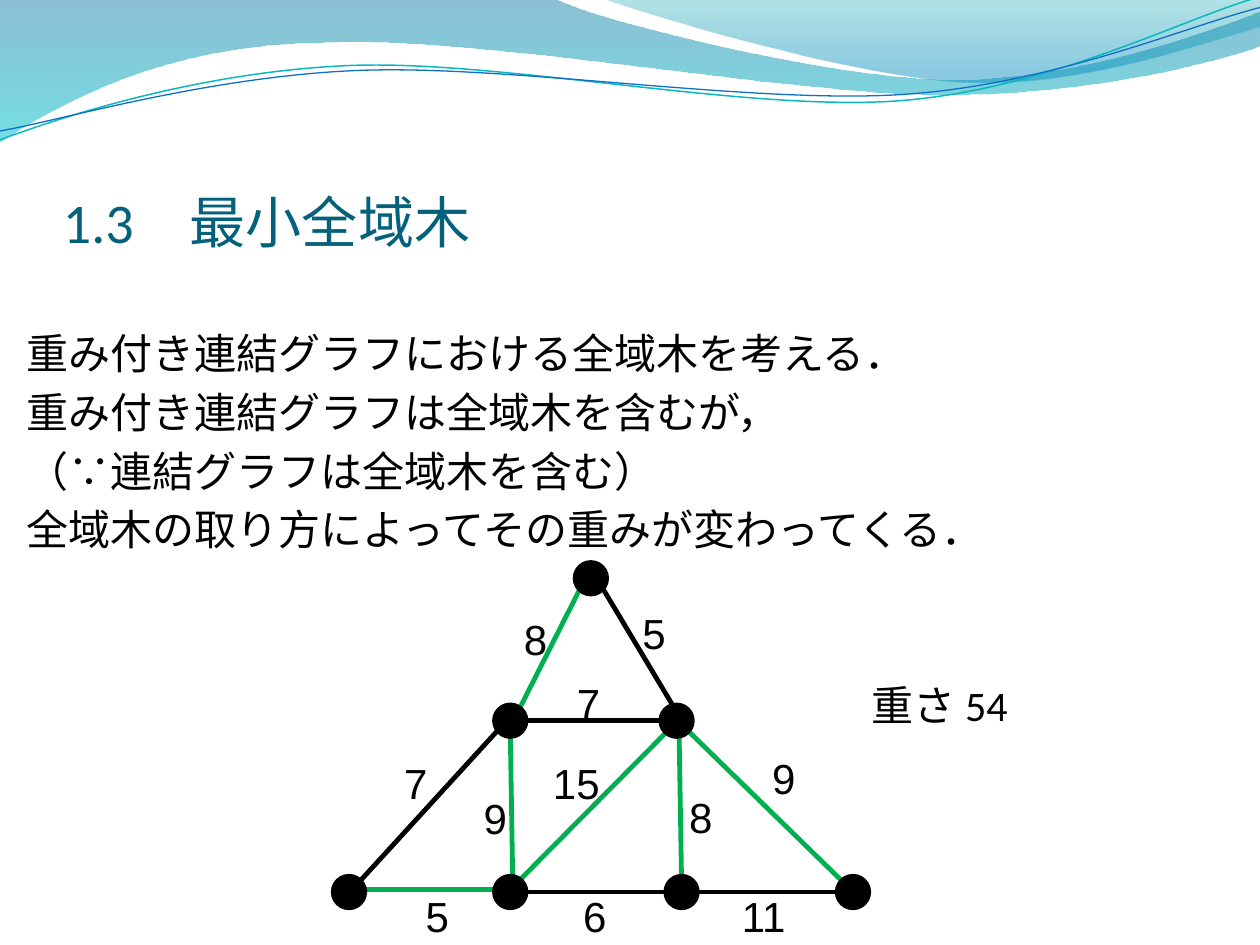
import math

from lxml import etree
from pptx import Presentation
from pptx import util as u
from pptx.dml.color import RGBColor
from pptx.enum import shapes, text
from pptx.oxml import ns

presentation = Presentation()
presentation.slide_width = u.Inches(10)
presentation.slide_height = u.Inches(7.5)
slide = presentation.slides.add_slide(presentation.slide_layouts[6])
column = presentation.slide_width / 10
row = presentation.slide_height / 7.5


def colour(value):
    return RGBColor.from_string(value)


def add_text(lines, left, top, width, height, size, font, value, wrap=True):
    shape = slide.shapes.add_textbox(
        int(left * column), int(top * row), int(width * column), int(height * row))
    frame = shape.text_frame
    frame.word_wrap = wrap
    for index, line in enumerate(lines):
        paragraph = frame.add_paragraph() if index else frame.paragraphs[0]
        if index:
            paragraph.space_before = u.Pt(size * 0.2)
        run = paragraph.add_run()
        run.text = line
        run.font.size = u.Pt(size)
        run.font.name = font
        run.font.color.rgb = colour(value)
    return frame


tilt = 357.3
waves = [
    ([[(0, -0.01)], [(4.4, -0.01)],
      [(4.76, 0.17), (6.64, 0.63), (7.58, 0.63)],
      [(8.53, 0.63), (9.58, 0.26), (10, 0.09)], [(10.01, 0.36)],
      [(9.83, 0.44), (8.7, 0.76), (7.46, 0.75)],
      [(6.22, 0.75), (3.82, 0.28), (2.57, 0.34)],
      [(1.29, 0.35), (0.46, 0.83), (-0.01, 1.13)], [(0, -0.01)]],
     [(0, "0074A1", 45), (1, "00C6CF", 55)], None, None),
    ([[(4.79, -0.01)],
      [(5.09, 0.11), (6.82, 0.62), (7.69, 0.65)],
      [(8.56, 0.69), (9.61, 0.32), (10, 0.21)], [(10, 0)], [(4.79, -0.01)]],
     [(0, "00A1A9", 30), (0.8, "008BBF", 45)], None, None),
    ([[(0, 1.11)],
      [(0.48, 0.93), (1.58, 0.57), (2.77, 0.52)],
      [(3.95, 0.47), (5.93, 0.89), (7.13, 0.8)],
      [(8.33, 0.71), (9.38, 0.15), (9.98, -0.02)]],
     None, ("0AB8BF", 0.85), (4.99, 0.58)),
    ([[(0, 1.04)],
      [(0.47, 0.96), (1.64, 0.61), (2.83, 0.56)],
      [(4.03, 0.51), (5.97, 0.83), (7.17, 0.75)],
      [(8.36, 0.67), (9.41, 0.21), (10, 0.06)]],
     None, ("0F6FC6", 0.75), (5, 0.59)),
]
for segments, stops, stroke, pivot in waves:
    points = [point for segment in segments for point in segment]
    if pivot:
        sine, cosine = (f(math.radians(-tilt)) for f in (math.sin, math.cos))
        offsets = [(x - pivot[0], y - pivot[1]) for x, y in points]
        points = [(pivot[0] + x * cosine - y * sine, pivot[1] + x * sine + y * cosine)
                  for x, y in offsets]
    outline = [(x * column, y * row) for x, y in points]
    builder = slide.shapes.build_freeform(*outline[0], scale=1.0)
    builder.add_line_segments(outline[1:], close=stops is not None)
    shape = builder.convert_to_shape()
    shape.shadow.inherit = False

    straight = iter(list(shape._element.iter(ns.qn("a:lnTo"))))
    for segment in segments[1:]:
        commands = [next(straight) for _ in segment]
        if len(commands) == 3:
            commands[0].addprevious(curve := etree.Element(ns.qn("a:cubicBezTo")))
            for command in commands:
                curve.append(command[0])
                command.getparent().remove(command)

    if stops:
        shape.fill.gradient()
        shape.fill.gradient_angle = 270
        for stop, (position, value, _) in zip(shape.fill.gradient_stops, stops):
            stop.position = position
            stop.color.rgb = colour(value)
        for element, (_, _, opacity) in zip(shape._element.iter(ns.qn("a:srgbClr")), stops):
            etree.SubElement(element, ns.qn("a:alpha")).set("val", str(opacity * 1000))
        shape.line.fill.background()
    else:
        shape.rotation = tilt
        shape.fill.background()
        shape.line.color.rgb = colour(stroke[0])
        shape.line.width = u.Pt(stroke[1])

body = add_text(["重み付き連結グラフにおける全域木を考える．",
                 "重み付き連結グラフは全域木を含むが，",
                 "（∵連結グラフは全域木を含む）",
                 "全域木の取り方によってその重みが変わってくる．",
                 "重さ 54"],
                0.11, 2.1, 10.17, 4.8, 24, "Calibri", "000000")
body.margin_top = int(0.5 * row)
total = body.paragraphs[-1]
total.space_before = u.Pt(71.5)
total._p.get_or_add_pPr().set("marL", str(int(6.71 * column)))

title = add_text(["1.3　最小全域木"], 0.5, 0.77, 9, 1.25, 32, "Calibri", "04617B")
title.vertical_anchor = text.MSO_ANCHOR.BOTTOM
title.margin_left = title.margin_right = title.margin_bottom = 0

chosen, other = "00B050", "000000"
edges = [
    (5.39, 5.82, 5.41, 7.03, chosen),
    (5.28, 5.82, 4.05, 7.06, chosen),
    (4.6, 4.68, 4.09, 5.69, chosen),
    (4.79, 4.68, 5.4, 5.7, other),
    (5.42, 5.76, 6.68, 6.99, chosen),
    (5.28, 7.08, 4.1, 7.08, other),
    (5.32, 5.72, 4.15, 5.72, other),
    (4.03, 7.06, 2.86, 7.06, chosen),
    (4.03, 5.71, 2.86, 6.99, other),
    (4.05, 5.82, 4.07, 7.02, chosen),
    (6.71, 7.08, 5.54, 7.08, other),
]
for x1, y1, x2, y2, value in edges:
    connector = slide.shapes.add_connector(
        shapes.MSO_CONNECTOR.STRAIGHT,
        int(x1 * column), int(y1 * row), int(x2 * column), int(y2 * row))
    connector.line.color.rgb = colour(value)
    connector.line.width = u.Pt(2.75)
    etree.SubElement(connector._element.spPr, ns.qn("a:effectLst"))

diameter = 0.26
nodes = [(4.56, 4.46), (2.64, 6.95), (6.64, 6.95), (3.92, 6.95),
         (5.28, 6.95), (3.92, 5.59), (5.24, 5.59)]
for left, top in nodes:
    node = slide.shapes.add_shape(
        shapes.MSO_SHAPE.OVAL, int(left * column), int(top * row),
        int(diameter * column), int(diameter * row))
    node.shadow.inherit = False
    node.fill.solid()
    node.fill.fore_color.rgb = colour("000000")
    node.line.color.rgb = colour("000000")
    node.line.width = u.Pt(2)

weights = [
    ("7", 3.11, 5.96), ("5", 3.28, 7.02), ("9", 3.74, 6.24), ("7", 4.48, 5.33),
    ("15", 4.29, 5.96), ("6", 4.53, 7.02), ("8", 5.37, 6.23), ("9", 6.03, 5.92),
    ("11", 5.79, 7.02), ("8", 4.06, 4.82), ("5", 5, 4.77),
]
for weight, left, top in weights:
    width = {"15": 0.58, "11": 0.55}.get(weight, 0.39)
    label = add_text([weight], left, top, width, 0.51, 24, "Arial", "000000", wrap=False)
    label.auto_size = text.MSO_AUTO_SIZE.SHAPE_TO_FIT_TEXT

presentation.save("out.pptx")
